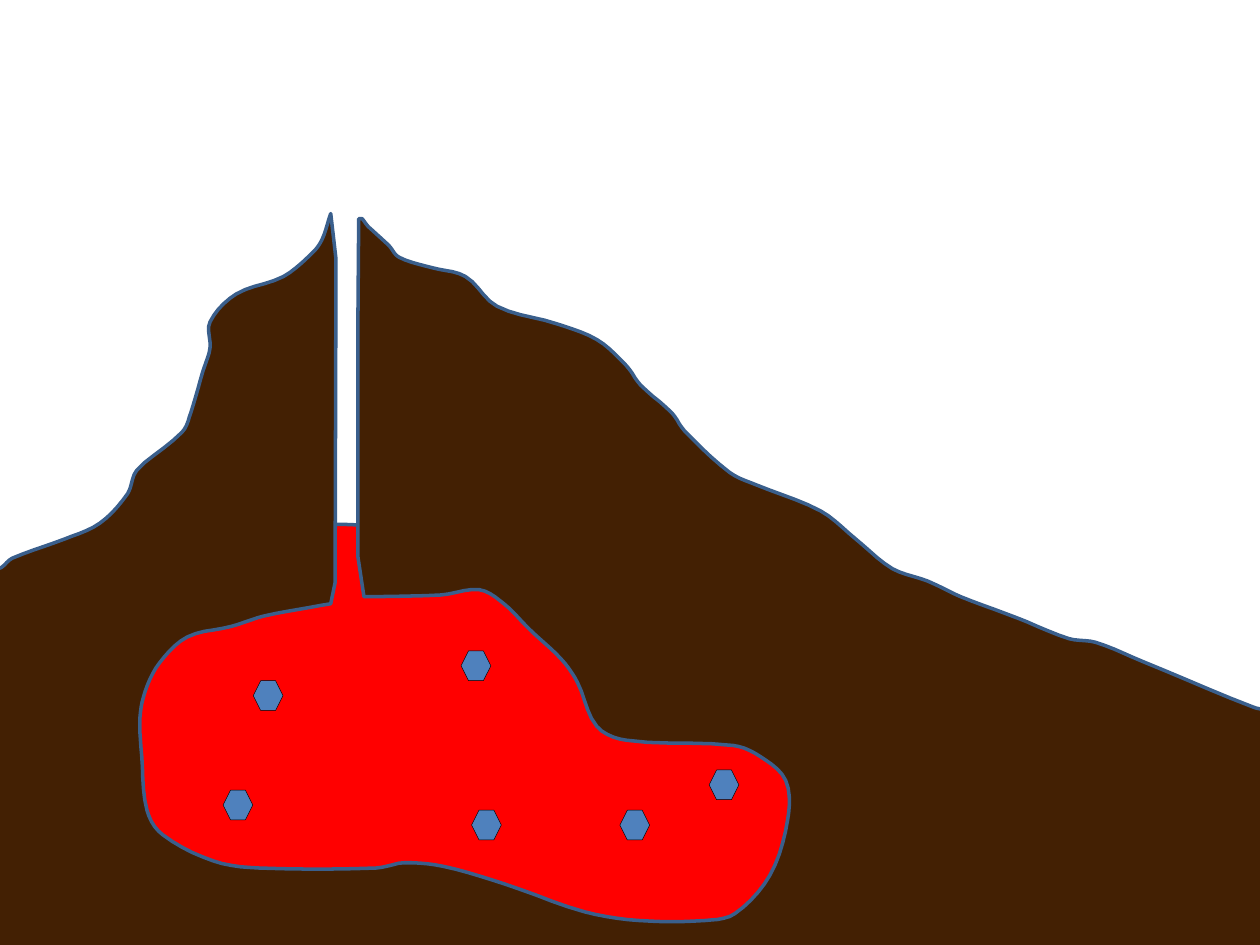
from math import dist

from pptx import Presentation
from pptx.dml.color import RGBColor
from pptx.enum.shapes import MSO_SHAPE
from pptx.util import Pt

HEXAGON = MSO_SHAPE.HEXAGON
LAVA = RGBColor(0xFF, 0x00, 0x00)
ROCK = RGBColor(0x43, 0x20, 0x03)
EDGE = RGBColor(0x3A, 0x5F, 0x8C)
CRYSTAL = RGBColor(0x4F, 0x81, 0xBD)
BLACK = RGBColor(0x00, 0x00, 0x00)

# All positions are in points
VENT_LEFT, VENT_RIGHT = 192, 204.5
CRYSTAL_SIZE = 17
STEPS = 5        # pieces drawn between two landmarks of a curve
PRECISION = 10   # outlines are stored in tenths of a point

prs = Presentation()
prs.slide_width, prs.slide_height = Pt(720), Pt(540)
slide = prs.slides.add_slide(prs.slide_layouts[6])


def smooth(landmarks):
    """Return a smooth open curve that passes through every landmark."""
    # The curve's direction at a landmark runs parallel to its two neighbours
    directions = []
    for i in range(len(landmarks)):
        before = landmarks[max(i - 1, 0)]
        after = landmarks[min(i + 1, len(landmarks) - 1)]
        span = dist(before, after)
        directions.append([(b - a) / span for a, b in zip(before, after)])

    # Hermite interpolation, with each direction scaled to the gap it crosses
    curve = []
    for i in range(len(landmarks) - 1):
        start, end = landmarks[i], landmarks[i + 1]
        gap = dist(start, end)
        for step in range(STEPS):
            t = step / STEPS
            toward_end = t * t * (3 - 2 * t)
            leaving = gap * t * (1 - t) ** 2
            arriving = gap * t * t * (t - 1)
            curve.append([
                start[axis] + toward_end * (end[axis] - start[axis])
                + leaving * directions[i][axis] + arriving * directions[i + 1][axis]
                for axis in (0, 1)])
    return curve + [landmarks[-1]]


def paint(shape, fill, line, width):
    shape.shadow.inherit = False
    shape.fill.solid()
    shape.fill.fore_color.rgb = fill
    shape.line.color.rgb = line
    shape.line.width = Pt(width)


# Magma: a loose blob behind the mountain, whose top shows in the vent
magma_east = [(417, 531), (443, 507), (469, 463), (467, 432), (438, 414)]
magma_top = [(371, 390), (316, 353), (262, 315), (215, 301), (166, 302), (117, 319)]
magma_west = [(87, 342), (72, 382), (67, 425), (70, 460), (92, 485)]
magma_bottom = [(127, 510), (168, 525), (220, 543), (253, 545), (409, 544)]
magma = smooth(magma_east + magma_top + magma_west + magma_bottom)

# Mountain surface: west slope up to the crater, east slope down from it
west_foot = [(-39, 327), (-1, 325), (7, 319), (37, 308), (57, 299), (73, 282)]
west_cliff = [(78, 269), (104, 247), (109, 236), (116, 212), (120, 199), (120, 184)]
west_peak = [(135, 168), (162, 158), (179, 144), (184, 137), (189, 122)]
west_slope = smooth(west_foot + west_cliff + west_peak)

east_peak = [(207, 125), (211, 130), (222, 140), (228, 147), (247, 153), (266, 158)]
east_shoulder = [(284, 175), (318, 185), (341, 194), (358, 209), (366, 220)]
east_flank = [(384, 236), (391, 246), (417, 270), (432, 277), (469, 292), (489, 308)]
east_foot = [(510, 325), (530, 332), (549, 341), (581, 353), (611, 365),
             (626, 367), (653, 378), (716, 404), (725, 406)]
east_slope = smooth(east_peak + east_shoulder + east_flank + east_foot)

# Vent: two straight walls that flare out where they meet the chamber
vent_west_wall = [(VENT_LEFT, 148), (VENT_LEFT - 0.5, 333), (189, 345)]
vent_east_wall = [(208, 341), (VENT_RIGHT, 318), (VENT_RIGHT, 187), (205, 125)]

# Chamber: followed from the vent's west wall round to its east wall
west_roof = [(183, 346), (151, 352), (132, 358), (107, 364)]
west_side = [(91, 379), (83, 395), (80, 410), (81, 432), (84, 463), (93, 477)]
floor = [(122, 492), (148, 496), (215, 496), (231, 493), (253, 495),
         (288, 505), (334, 521), (365, 526), (403, 526)]
east_side = [(420, 522), (440, 500), (450, 469), (449, 446), (434, 432)]
ledge = [(419, 426), (358, 423), (341, 415), (330, 390)]
east_roof = [(321, 377), (303, 360), (288, 345), (274, 337), (252, 340), (208, 341)]
chamber = smooth(west_roof + west_side + floor + east_side + ledge + east_roof)

# Base: closes the rock beyond the slide's edges
base = [(727, 430), (730, 504), (759, 551), (728, 569), (367, 600),
        (14, 568), (-8, 552), (-60, 398), (-59, 342)]

mountain = west_slope + vent_west_wall + chamber + vent_east_wall + east_slope + base

# Draw the magma first, then the mountain with its hollow over it
for outline, fill in ((magma, LAVA), (mountain, ROCK)):
    vertices = [(x * PRECISION, y * PRECISION) for x, y in outline]
    builder = slide.shapes.build_freeform(*vertices[0], scale=Pt(1) / PRECISION)
    builder.add_line_segments(vertices[1:], close=True)
    paint(builder.convert_to_shape(), fill, EDGE, 2)

# Crystals floating in the magma: left and top of each
crystals = [(269.5, 463), (144.75, 389), (127.5, 451.5),
            (263.5, 372), (354.25, 463), (405.25, 440)]
for left, top in crystals:
    crystal = slide.shapes.add_shape(
        HEXAGON, Pt(left), Pt(top), Pt(CRYSTAL_SIZE), Pt(CRYSTAL_SIZE))
    paint(crystal, CRYSTAL, BLACK, 0.25)

prs.save("out.pptx")
